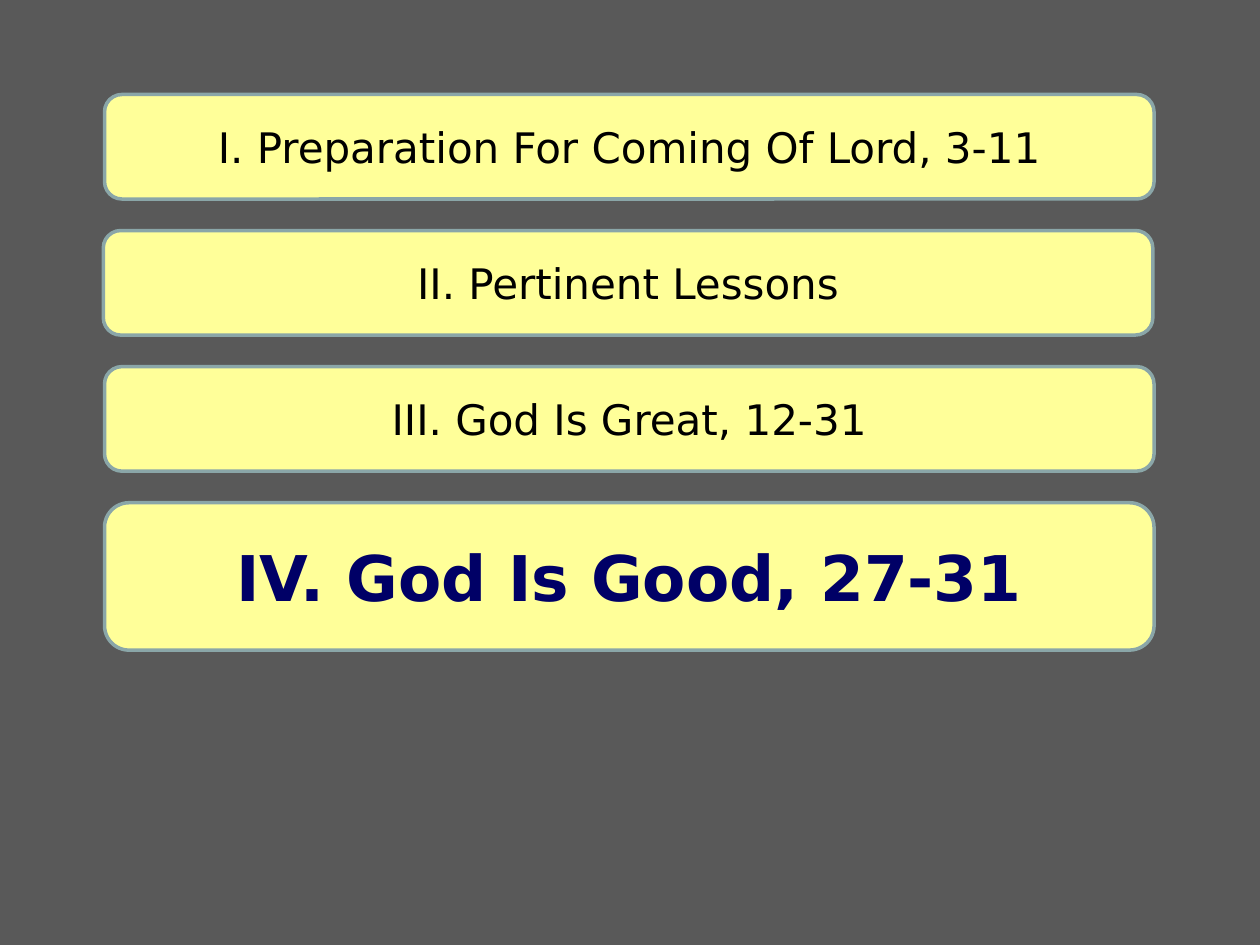
from dataclasses import dataclass

from pptx import Presentation
from pptx.dml.color import RGBColor
from pptx.enum.shapes import MSO_SHAPE
from pptx.enum.text import MSO_ANCHOR, PP_ALIGN
from pptx.util import Inches, Pt

ROUNDED_RECTANGLE = MSO_SHAPE.ROUNDED_RECTANGLE
MIDDLE = MSO_ANCHOR.MIDDLE
CENTER = PP_ALIGN.CENTER
BLANK_LAYOUT = 6


@dataclass(frozen=True)
class Theme:
    background: RGBColor = RGBColor(0x59, 0x59, 0x59)
    panel: RGBColor = RGBColor(0xFF, 0xFF, 0x99)
    border: RGBColor = RGBColor(0x8A, 0xA6, 0xA8)
    text: RGBColor = RGBColor(0x00, 0x00, 0x00)
    highlight: RGBColor = RGBColor(0x00, 0x00, 0x66)
    font: str = "DejaVu Sans"
    point_size: Pt = Pt(24)
    highlight_size: Pt = Pt(36)
    border_width: Pt = Pt(2)


class OutlineSlide:
    def __init__(self, presentation, theme):
        self.theme = theme
        self.slide = presentation.slides.add_slide(
            presentation.slide_layouts[BLANK_LAYOUT]
        )
        fill = self.slide.background.fill
        fill.solid()
        fill.fore_color.rgb = theme.background

    def add_panel(self, text, left, top, width, height, highlighted=False):
        theme = self.theme
        shape = self.slide.shapes.add_shape(
            ROUNDED_RECTANGLE,
            Inches(left), Inches(top), Inches(width), Inches(height),
        )
        shape.shadow.inherit = False
        shape.fill.solid()
        shape.fill.fore_color.rgb = theme.panel
        shape.line.color.rgb = theme.border
        shape.line.width = theme.border_width

        frame = shape.text_frame
        frame.word_wrap = True
        frame.vertical_anchor = MIDDLE
        paragraph = frame.paragraphs[0]
        paragraph.alignment = CENTER
        run = paragraph.add_run()
        run.text = text
        font_format = {
            "name": theme.font,
            "size": theme.highlight_size if highlighted else theme.point_size,
            "bold": highlighted,
        }
        for name, value in font_format.items():
            setattr(run.font, name, value)
        run.font.color.rgb = theme.highlight if highlighted else theme.text


def main():
    presentation = Presentation()
    presentation.slide_width = Inches(10)
    presentation.slide_height = Inches(7.5)
    outline = OutlineSlide(presentation, Theme())

    width, top, gap = 8.33, 0.75, 0.25
    points = [
        ("I. Preparation For Coming Of Lord, 3-11", 0.83, 0.83, False),
        ("II. Pertinent Lessons", 0.82, 0.83, False),
        ("III. God Is Great, 12-31", 0.83, 0.83, False),
        ("IV. God Is Good, 27-31", 0.83, 1.17, True),
    ]
    for text, left, height, highlighted in points:
        outline.add_panel(text, left, top, width, height, highlighted)
        top += height + gap

    presentation.save("out.pptx")


if __name__ == "__main__":
    main()
